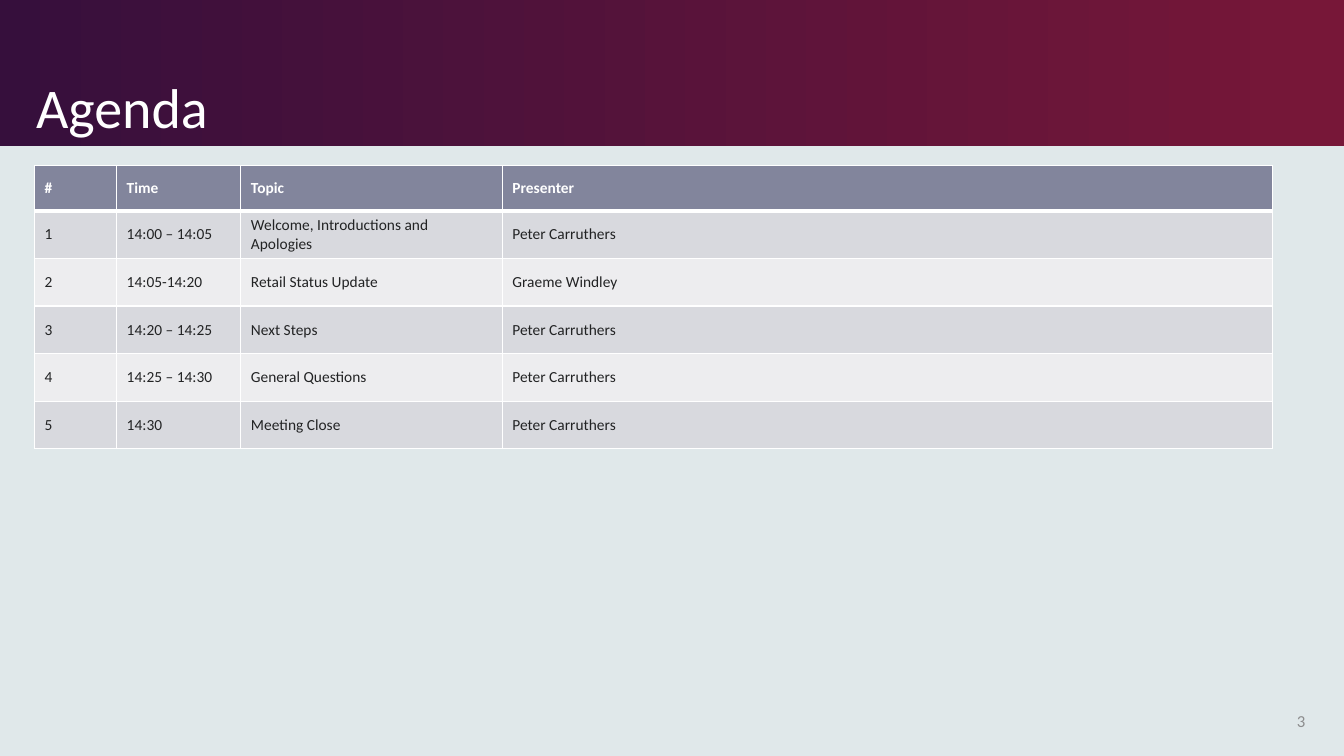
from lxml.etree import SubElement
from pptx import Presentation
from pptx.dml.color import RGBColor
from pptx.enum.shapes import MSO_SHAPE as Shape
from pptx.enum.text import MSO_ANCHOR as Anchor, PP_ALIGN as Align
from pptx.oxml.ns import qn
from pptx.util import Cm, Pt

FONT = "Calibri"
WHITE = "FFFFFF"
HEADER_FILL = "82859C"
BAND_FILLS = ("D8D9DE", "EDEDEF")
BODY_TEXT = "222324"

COLUMN_WIDTHS = (2.07, 3.13, 6.59, 19.4)
HEADER_HEIGHT, ROW_HEIGHT = 1.13, 1.2
AGENDA = (
    ("#", "Time", "Topic", "Presenter"),
    ("1", "14:00 – 14:05", "Welcome, Introductions and Apologies", "Peter Carruthers"),
    ("2", "14:05-14:20", "Retail Status Update", "Graeme Windley"),
    ("3", "14:20 – 14:25", "Next Steps", "Peter Carruthers"),
    ("4", "14:25 – 14:30", "General Questions", "Peter Carruthers"),
    ("5", "14:30", "Meeting Close", "Peter Carruthers"),
)


def color(hex_code):
    return RGBColor.from_string(hex_code)


def format_runs(paragraph, size, hex_code, bold=False):
    for run in paragraph.runs:
        run.font.name = FONT
        run.font.size = Pt(size)
        run.font.bold = bold
        run.font.color.rgb = color(hex_code)


def add_band(slide, width, height):
    """Gradient band behind the title."""
    band = slide.shapes.add_shape(Shape.RECTANGLE, 0, 0, width, height)
    band.shadow.inherit = False
    band.line.fill.background()
    band.fill.gradient()
    band.fill.gradient_angle = 0
    stops = ((0, "360F3C"), (0.99, "771738"))
    for stop, (position, hex_code) in zip(band.fill.gradient_stops, stops):
        stop.position = position
        stop.color.rgb = color(hex_code)


def add_text(slide, text, box, size, hex_code, anchor, align=Align.LEFT, spacing=1.0):
    shape = slide.shapes.add_textbox(*(Cm(length) for length in box))
    text_frame = shape.text_frame
    text_frame.word_wrap = True
    text_frame.vertical_anchor = anchor
    text_frame.text = text
    paragraph = text_frame.paragraphs[0]
    paragraph.alignment = align
    paragraph.line_spacing = spacing
    format_runs(paragraph, size, hex_code)


def set_borders(cell, bottom_width):
    properties = cell._tc.get_or_add_tcPr()
    for side, width in (("L", 1), ("R", 1), ("T", 1), ("B", bottom_width)):
        line = SubElement(properties, qn(f"a:ln{side}"), w=str(Pt(width)))
        fill = SubElement(line, qn("a:solidFill"))
        SubElement(fill, qn("a:srgbClr"), val=WHITE)


def fill_cell(cell, text, row_index):
    is_header = row_index == 0
    set_borders(cell, bottom_width=3 if is_header else 1)
    cell.fill.solid()
    cell.fill.fore_color.rgb = color(
        HEADER_FILL if is_header else BAND_FILLS[(row_index - 1) % 2])
    cell.vertical_anchor = Anchor.MIDDLE
    if is_header:
        cell.margin_top = cell.margin_bottom = 0
    cell.text_frame.text = text
    format_runs(cell.text_frame.paragraphs[0], 11,
                WHITE if is_header else BODY_TEXT, bold=is_header)


def add_agenda_table(slide, left, top):
    heights = [HEADER_HEIGHT] + [ROW_HEIGHT] * (len(AGENDA) - 1)
    table = slide.shapes.add_table(
        len(AGENDA), len(COLUMN_WIDTHS), Cm(left), Cm(top),
        Cm(sum(COLUMN_WIDTHS)), Cm(sum(heights))).table
    for column, width in zip(table.columns, COLUMN_WIDTHS):
        column.width = Cm(width)
    for row_index, (row, height) in enumerate(zip(table.rows, heights)):
        row.height = Cm(height)
        for cell, text in zip(row.cells, AGENDA[row_index]):
            fill_cell(cell, text, row_index)


def main():
    presentation = Presentation()
    presentation.slide_width = Cm(33.87)
    presentation.slide_height = Cm(19.05)
    slide = presentation.slides.add_slide(presentation.slide_layouts[6])

    # Background and title band
    slide.background.fill.solid()
    slide.background.fill.fore_color.rgb = color("E0E8EA")
    add_band(slide, presentation.slide_width, Cm(3.68))
    add_text(slide, "Agenda", (0.66, 0.38, 25, 3.3), 40, WHITE,
             Anchor.BOTTOM, spacing=0.9)

    # Slide number
    add_text(slide, "3", (31.55, 17.65, 1.6, 1.02), 12, "8D8D8E",
             Anchor.MIDDLE, Align.RIGHT)

    # Agenda
    add_agenda_table(slide, 0.87, 4.18)

    presentation.save("out.pptx")


if __name__ == "__main__":
    main()
